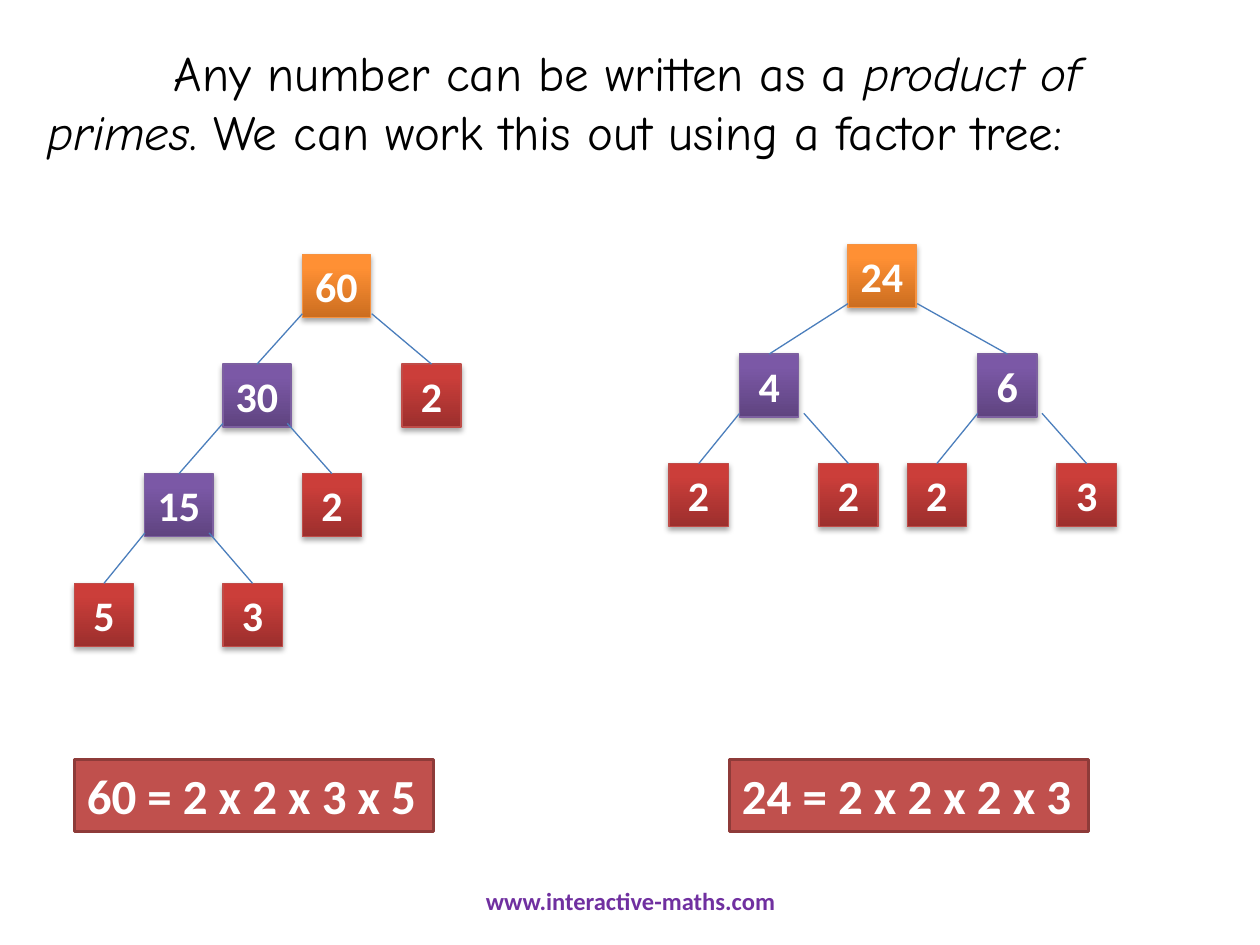
from dataclasses import dataclass

from pptx import Presentation
from pptx.dml.color import RGBColor
from pptx.enum.shapes import MSO_CONNECTOR, MSO_SHAPE
from pptx.enum.text import MSO_ANCHOR, MSO_AUTO_SIZE, PP_ALIGN
from pptx.oxml import parse_xml
from pptx.oxml.ns import qn
from pptx.util import Inches, Pt

# Content: a node is (value, kind, left, children)
INTRO = [
    ("\tAny number can be written as a ", False),
    ("product of primes", True),
    (". We can work this out using a factor tree:", False),
]
TREES = [
    (2.02, ("60", "root", 2.4, [
        ("30", "factor", 1.77, [
            ("15", "factor", 1.15, [
                ("5", "prime", 0.59, []),
                ("3", "prime", 1.77, []),
            ]),
            ("2", "prime", 2.4, []),
        ]),
        ("2", "prime", 3.19, []),
    ])),
    (1.94, ("24", "root", 6.73, [
        ("4", "factor", 5.87, [
            ("2", "prime", 5.31, []),
            ("2", "prime", 6.5, []),
        ]),
        ("6", "factor", 7.76, [
            ("2", "prime", 7.2, []),
            ("3", "prime", 8.39, []),
        ]),
    ])),
]
RESULTS = [(0.59, "60 = 2 x 2 x 3 x 5"), (5.79, "24 = 2 x 2 x 2 x 3")]
WEBSITE = "www.interactive-maths.com"


@dataclass(frozen=True)
class Theme:
    intro_font: str = "Comic Neue"
    font: str = "Calibri"
    large: int = 28
    medium: int = 24
    small: int = 14
    black: str = "000000"
    white: str = "FFFFFF"
    website: str = "7030A0"
    branch: str = "4B7EBC"
    result_fill: str = "C0504D"
    result_line: str = "8E3B39"


THEME = Theme()
# Gradient colours from bottom to top, then the outline
NODE_COLOURS = {
    "root": (("CC6E20", "FF9034", "FF9136"), "F69240"),
    "factor": (("5F4480", "7B58A6", "7C57A8"), "7D60A0"),
    "prime": (("9C2F2D", "CB3E3A", "CE3B37"), "BF4C48"),
}
GRADIENT_STOPS = (0, 80000, 100000)
NAMESPACE = 'xmlns:a="http://schemas.openxmlformats.org/drawingml/2006/main"'

# Tree measures in inches
LEVEL_GAP = 0.87
NODE_HEIGHT = 0.5
WIDE_NODE, NARROW_NODE = 0.54, 0.47
BRANCH_DROP = 0.47
RIGHT_BRANCH = {"root": 0.55, "factor": 0.51}


def format_run(run, size, colour, font=THEME.font, bold=True, italic=False):
    run.font.name = font
    run.font.size = Pt(size)
    run.font.color.rgb = RGBColor.from_string(colour)
    run.font.bold = bold
    run.font.italic = italic


def add_box(slide, left, top, width, height, text, size, align, wrap, line, line_width):
    shape = slide.shapes.add_shape(
        MSO_SHAPE.RECTANGLE, Inches(left), Inches(top), Inches(width), Inches(height))
    shape.shadow.inherit = False
    shape.line.color.rgb = RGBColor.from_string(line)
    shape.line.width = Pt(line_width)
    text_frame = shape.text_frame
    text_frame.text = text
    text_frame.word_wrap = wrap
    text_frame.auto_size = MSO_AUTO_SIZE.SHAPE_TO_FIT_TEXT
    text_frame.vertical_anchor = MSO_ANCHOR.TOP
    paragraph = text_frame.paragraphs[0]
    paragraph.alignment = align
    format_run(paragraph.runs[0], size, THEME.white)
    return shape


def add_node(slide, value, kind, left, top):
    colours, outline = NODE_COLOURS[kind]
    wide = len(value) > 1
    shape = add_box(slide, left, top, WIDE_NODE if wide else NARROW_NODE, NODE_HEIGHT,
                    value, THEME.medium, PP_ALIGN.CENTER, not wide, outline, 0.75)
    properties = shape._element.spPr
    stops = "".join(
        f'<a:gs pos="{position}"><a:srgbClr val="{colour}"/></a:gs>'
        for position, colour in zip(GRADIENT_STOPS, colours))
    properties.insert(2, parse_xml(
        f'<a:gradFill {NAMESPACE} rotWithShape="1"><a:gsLst>{stops}</a:gsLst>'
        '<a:lin ang="16200000" scaled="0"/></a:gradFill>'))
    properties.find(qn("a:effectLst")).append(parse_xml(
        f'<a:outerShdw {NAMESPACE} blurRad="40000" dist="23000" dir="5400000" '
        f'rotWithShape="0"><a:srgbClr val="{THEME.black}"><a:alpha val="35000"/>'
        '</a:srgbClr></a:outerShdw>'))
    return shape


def add_branch(slide, start_x, start_y, child):
    connector = slide.shapes.add_connector(
        MSO_CONNECTOR.STRAIGHT, Inches(start_x), Inches(start_y),
        child.left + child.width // 2, child.top)
    connector.end_connect(child, 0)
    connector.line.color.rgb = RGBColor.from_string(THEME.branch)
    connector.line.width = Pt(0.75)
    connector._element.spPr.append(parse_xml(f"<a:effectLst {NAMESPACE}/>"))


def add_tree(slide, node, top):
    value, kind, left, children = node
    shape = add_node(slide, value, kind, left, top)
    for index, child in enumerate(children):
        child_shape = add_tree(slide, child, top + LEVEL_GAP)
        start_x = left + index * RIGHT_BRANCH[kind]
        add_branch(slide, start_x, top + BRANCH_DROP, child_shape)
    return shape


def add_text_box(slide, left, top, width, height):
    text_frame = slide.shapes.add_textbox(
        Inches(left), Inches(top), Inches(width), Inches(height)).text_frame
    text_frame.word_wrap = True
    return text_frame


def main():
    presentation = Presentation()
    presentation.slide_width = Inches(10)
    presentation.slide_height = Inches(7.5)
    slide = presentation.slides.add_slide(presentation.slide_layouts[6])

    # Introduction, with its first line indented by a one-inch tab
    text_frame = add_text_box(slide, 0.28, 0.29, 9.37, 1.51)
    text_frame.auto_size = MSO_AUTO_SIZE.SHAPE_TO_FIT_TEXT
    paragraph = text_frame.paragraphs[0]
    tab_stops = parse_xml(
        f'<a:tabLst {NAMESPACE}><a:tab pos="{Inches(1)}" algn="l"/></a:tabLst>')
    paragraph._p.get_or_add_pPr().append(tab_stops)
    for text, italic in INTRO:
        run = paragraph.add_run()
        run.text = text
        format_run(run, THEME.large, THEME.black, THEME.intro_font, False, italic)

    # Factor trees
    for top, root in TREES:
        add_tree(slide, root, top)

    # Products of primes
    for left, text in RESULTS:
        shape = add_box(slide, left, 6.03, 2.85, 0.57, text, THEME.large,
                        PP_ALIGN.LEFT, False, THEME.result_line, 2)
        shape.fill.solid()
        shape.fill.fore_color.rgb = RGBColor.from_string(THEME.result_fill)

    # Website
    text_frame = add_text_box(slide, 3.42, 6.95, 3.17, 0.4)
    text_frame.text = WEBSITE
    text_frame.vertical_anchor = MSO_ANCHOR.MIDDLE
    paragraph = text_frame.paragraphs[0]
    paragraph.alignment = PP_ALIGN.CENTER
    format_run(paragraph.runs[0], THEME.small, THEME.website)

    presentation.save("out.pptx")


if __name__ == "__main__":
    main()
